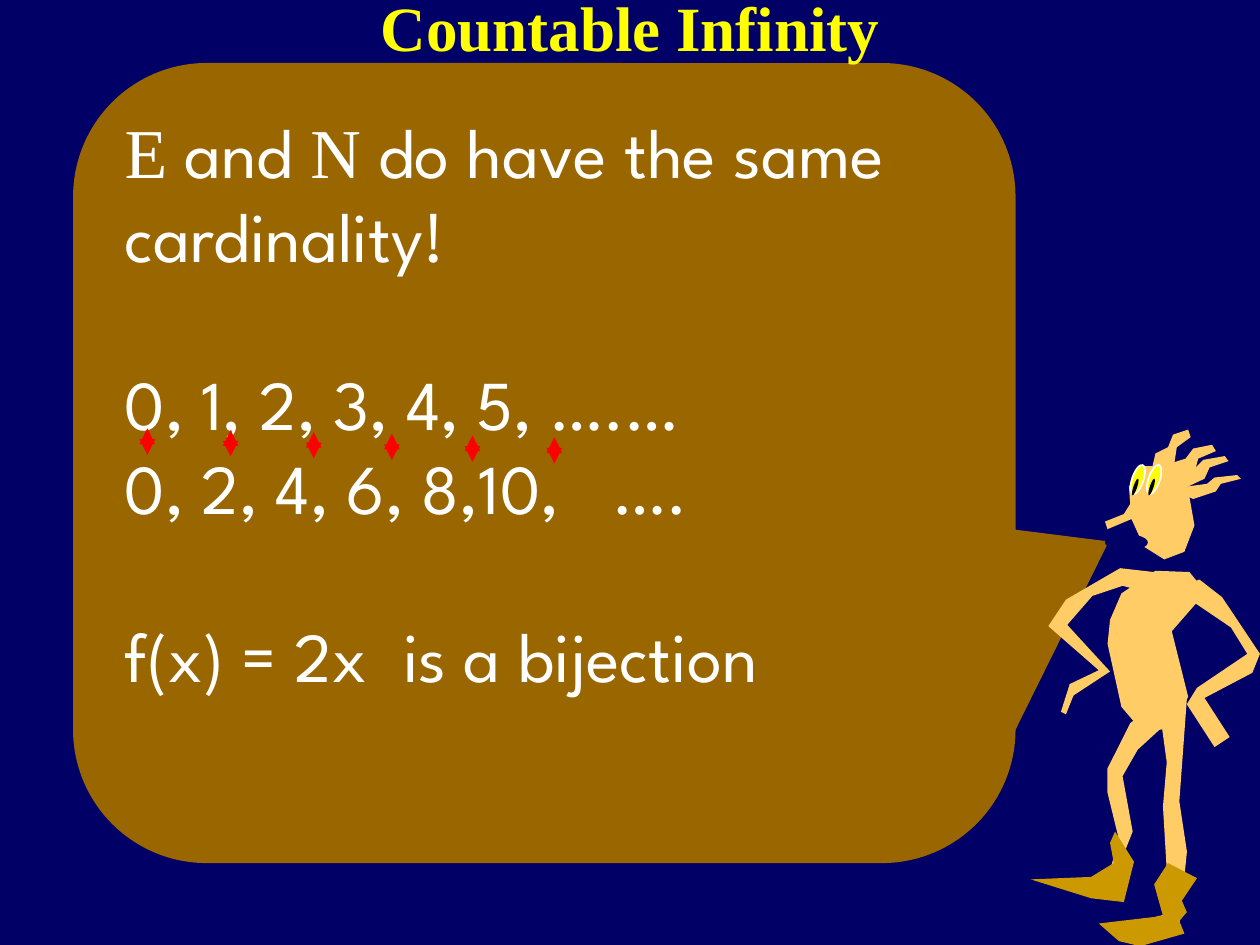
"""Build the slide on countable infinity: a speech callout, pairing arrows and a cartoon speaker."""
from pptx import Presentation, util as u
from pptx.dml.color import RGBColor
from pptx.enum import shapes, text
from pptx.oxml import parse_xml
from pptx.oxml.ns import nsdecls, qn

NAVY = RGBColor(0x00, 0x00, 0x66)
BROWN = RGBColor(0x99, 0x66, 0x00)
SKIN = RGBColor(0xFF, 0xCC, 0x66)
SHOE = RGBColor(0xCC, 0x99, 0x00)
YELLOW = RGBColor(0xFF, 0xFF, 0x00)
WHITE = RGBColor(0xFF, 0xFF, 0xFF)
BLACK = RGBColor(0x00, 0x00, 0x00)
RED = RGBColor(0xFF, 0x00, 0x00)
SERIF, SANS = "Times New Roman", "League Spartan"

TITLE = "Countable Infinity"
SPEECH = [
    (None, [("E", SERIF), (" and ", SANS), ("N", SERIF), (" do have the same cardinality!", SANS)]),
    (3.88, [("0, 1, 2, 3, 4, 5, ….…", SANS), ("\n", SANS), ("0, 2, 4, 6, 8,10,\t….", SANS)]),
    (2.21, [("f(x) = 2x\tis a bijection", SANS)]),
]
PAIR_X = [1.17, 1.83, 2.49, 3.11, 3.75, 4.4]
PAIR_TOP, PAIR_DROP, PAIR_HEIGHT = 3.4, 0.014, 0.21

BODY = {
    "torso": [(881, 492), (890, 471), (917, 453), (944, 454), (957, 470), (930, 501), (943, 553),
              (930, 577), (908, 582), (890, 561), (879, 511)],
    "right arm": [(943, 475), (936, 466), (952, 460), (970, 474), (1000, 519), (994, 534), (956, 554),
                  (976, 585), (964, 593), (942, 559), (950, 546), (990, 519), (977, 498)],
    "left arm": [(889, 451), (924, 455), (917, 472), (891, 465), (867, 473), (847, 496), (881, 533),
                 (852, 552), (846, 567), (842, 565), (849, 543), (872, 532), (832, 497), (846, 476)],
    "right leg": [(919, 554), (942, 554), (936, 636), (942, 676), (936, 735), (895, 744), (884, 736),
                  (928, 725), (923, 640), (926, 605)],
    "left leg": [(879, 610), (897, 574), (919, 556), (939, 562), (903, 595), (891, 616), (899, 660),
                 (880, 708), (825, 699), (879, 698), (888, 666), (879, 629)],
    "head": [(897, 400), (896, 386), (909, 370), (930, 370), (942, 383), (948, 417), (940, 438),
             (924, 444), (908, 434), (898, 412), (879, 420), (877, 414), (892, 408)],
}
SHOES = {
    "right shoe": [(916, 702), (927, 685), (950, 697), (938, 715), (942, 724), (936, 731), (940, 741),
                   (905, 751), (888, 747), (872, 733), (923, 727)],
    "left shoe": [(885, 660), (900, 684), (892, 716), (866, 713), (818, 698), (866, 696), (884, 685),
                  (881, 669)],
}
LOCK = [(20, 100), (0, 80), (10, 48), (42, 35), (56, 10), (93, 0), (100, 16), (66, 35), (58, 68)]
LOCK_BOXES = [(9.38, 3.77, 0.47, 0.19), (9.3, 3.62, 0.45, 0.26),
              (9.24, 3.53, 0.41, 0.32), (9.14, 3.41, 0.31, 0.4)]
EYE_X, EYE_TILT = [8.91, 9.04], 288.6


def inches(*values):
    return [u.Cm(value * 2.54) for value in values]


def paint(part, fill, outline=None):
    part.shadow.inherit = False
    part.fill.solid()
    part.fill.fore_color.rgb = fill
    if outline is None:
        part.line.fill.background()
    else:
        part.line.color.rgb = outline
        part.line.width = u.Pt(1)


def add_run(paragraph, words, font, size, color, bold=False):
    run = paragraph.add_run()
    run.text = words
    run.font.name, run.font.size, run.font.bold = font, u.Pt(size), bold
    run.font.color.rgb = color


def add_speech(slide):
    callout = slide.shapes.add_shape(
        shapes.MSO_SHAPE.ROUNDED_RECTANGULAR_CALLOUT, *inches(0.58, 0.5, 7.48, 6.35))
    for index, value in enumerate((0.599, 0.098, 0.167)):
        callout.adjustments[index] = value
    paint(callout, BROWN)
    frame = callout.text_frame
    frame.word_wrap = True
    frame.vertical_anchor = text.MSO_ANCHOR.TOP
    for index, (tab, runs) in enumerate(SPEECH):
        paragraph = frame.add_paragraph() if index else frame.paragraphs[0]
        paragraph.alignment = text.PP_ALIGN.LEFT
        paragraph.space_before = u.Pt(48 if index else 0)
        if tab:
            paragraph._p.get_or_add_pPr().append(parse_xml(
                f'<a:tabLst {nsdecls("a")}><a:tab pos="{inches(tab)[0]}" algn="l"/></a:tabLst>'))
        for words, font in runs:
            if words == "\n":
                paragraph.add_line_break()
            else:
                add_run(paragraph, words, font, 40, WHITE)


def add_speaker(slide):
    speaker = slide.shapes.add_group_shape().shapes

    def add_outline(points, fill):
        builder = speaker.build_freeform(*points[0], scale=u.Cm(2.54) / 100)
        builder.add_line_segments(points[1:], close=True)
        paint(builder.convert_to_shape(), fill)

    def add_oval(box, fill, outline=None, tilt=0):
        oval = speaker.add_shape(shapes.MSO_SHAPE.OVAL, *inches(*box))
        oval.rotation = tilt
        paint(oval, fill, outline)

    for points in BODY.values():
        add_outline(points, SKIN)
    for left, top, width, height in LOCK_BOXES:
        add_outline([(left * 100 + x * width, top * 100 + y * height) for x, y in LOCK], SKIN)
    for x in EYE_X:
        add_oval((x, 3.76, 0.24, 0.09), YELLOW, WHITE, EYE_TILT)
        add_oval((x + 0.03, 3.85, 0.14, 0.03), BLACK, tilt=EYE_TILT)
    add_oval((8.77, 4.24, 0.34, 0.13), NAVY)
    for points in SHOES.values():
        add_outline(points, SHOE)


def add_title(slide):
    frame = slide.shapes.add_textbox(*inches(0.75, -0.42, 8.5, 1.25)).text_frame
    frame.word_wrap = True
    frame.vertical_anchor = text.MSO_ANCHOR.MIDDLE
    frame.paragraphs[0].alignment = text.PP_ALIGN.CENTER
    add_run(frame.paragraphs[0], TITLE, SERIF, 36, YELLOW, True)


def add_pairings(slide):
    for index, x in enumerate(PAIR_X):
        top = PAIR_TOP + index * PAIR_DROP
        pairing = slide.shapes.add_connector(
            shapes.MSO_CONNECTOR.STRAIGHT, *inches(x, top, x, top + PAIR_HEIGHT))
        pairing.line.color.rgb = RED
        pairing.line.width = u.Pt(3)
        for end in ("headEnd", "tailEnd"):
            pairing.line._ln.append(parse_xml(f'<a:{end} {nsdecls("a")} type="triangle"/>'))
        pairing._element.spPr.append(pairing._element.makeelement(qn("a:effectLst"), {}))


def main():
    deck = Presentation()
    deck.slide_width, deck.slide_height = inches(10, 7.5)
    slide = deck.slides.add_slide(deck.slide_layouts[6])
    slide.background.fill.solid()
    slide.background.fill.fore_color.rgb = NAVY
    add_speech(slide)
    add_speaker(slide)
    add_title(slide)
    add_pairings(slide)
    deck.save("out.pptx")


if __name__ == "__main__":
    main()
